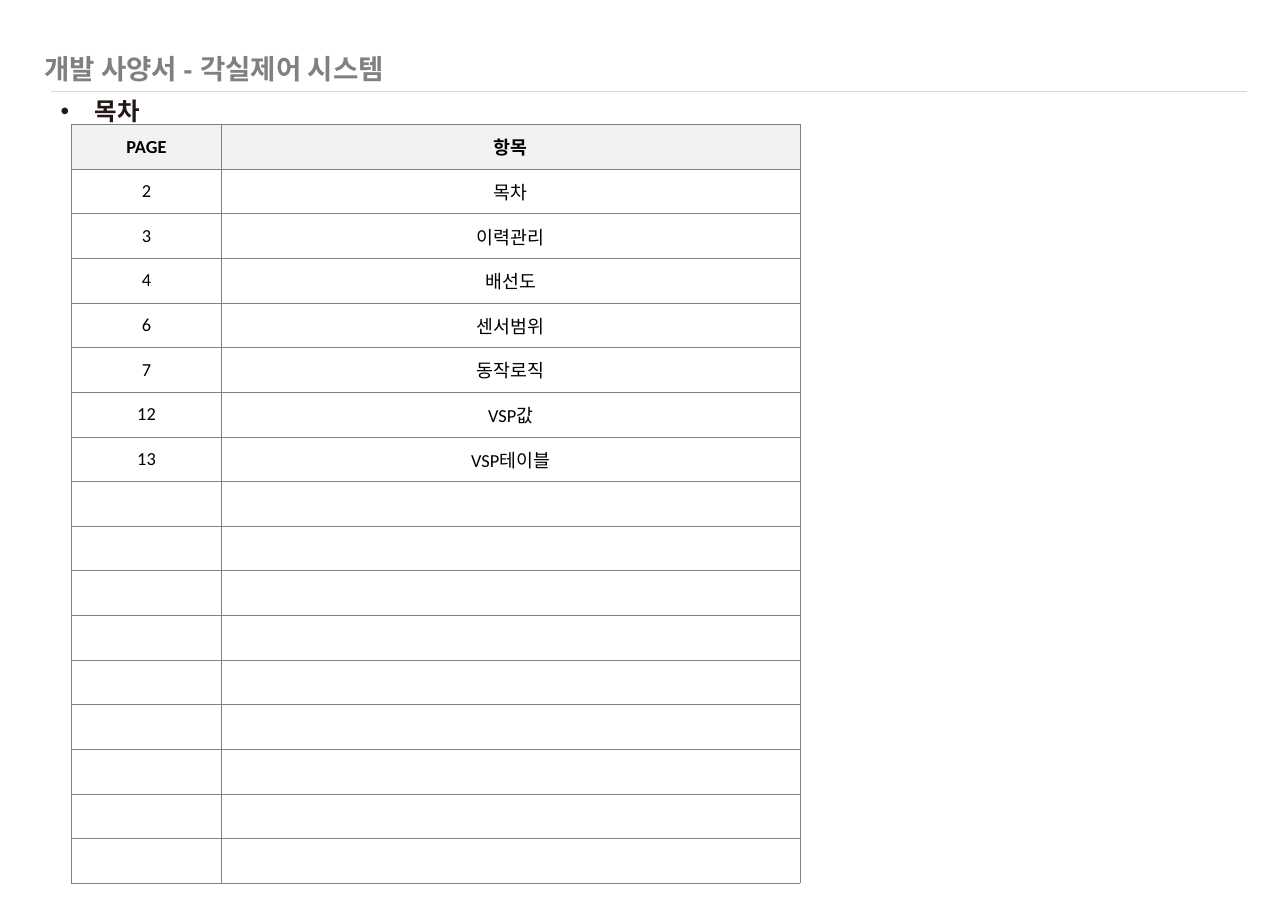
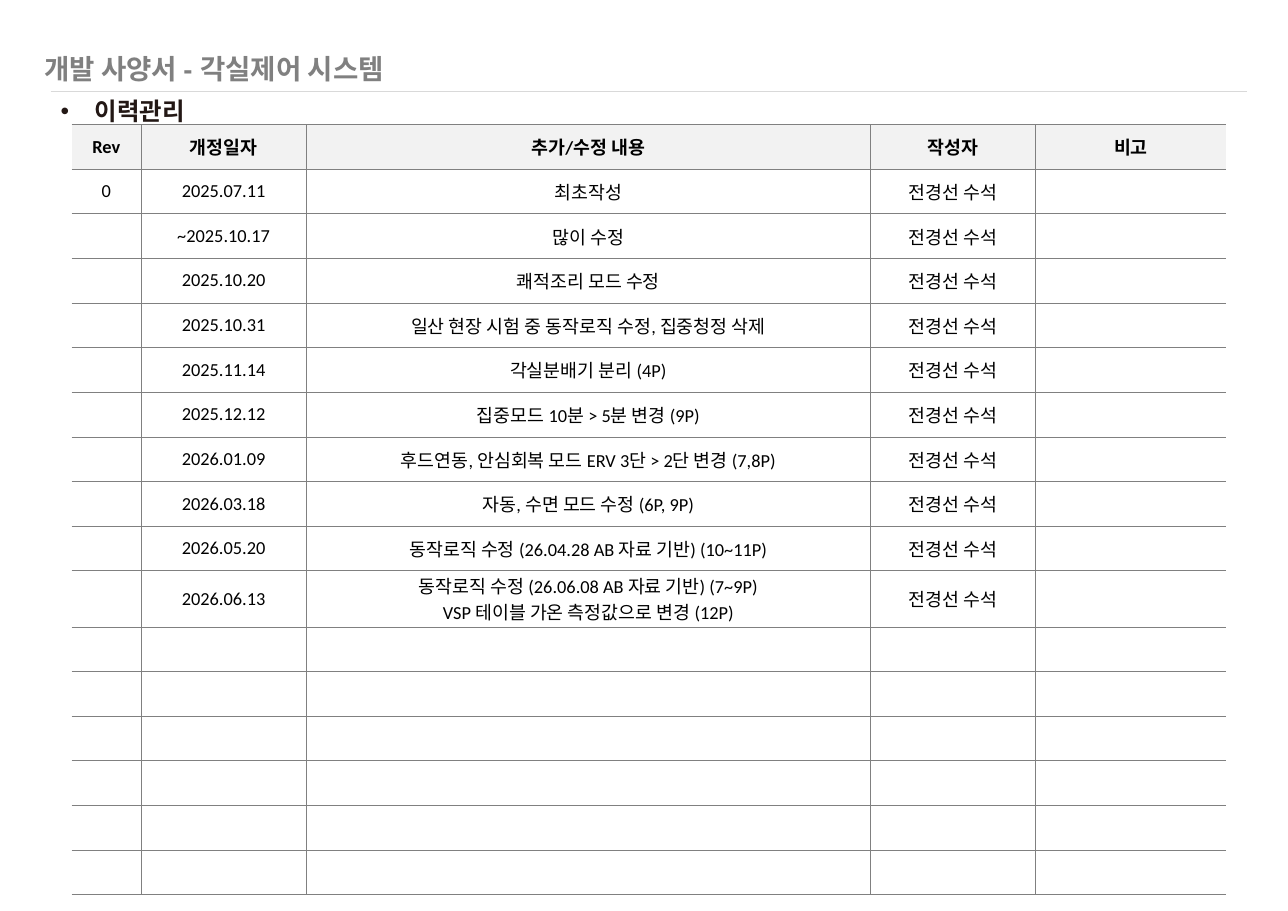
from lxml import etree
from pptx import Presentation
from pptx import util as u
from pptx.dml.color import RGBColor
from pptx.enum import shapes, text
from pptx.oxml import ns

ROW_COUNT = 17
ROW_HEIGHT = 6.89 / ROW_COUNT
TWO_LINE_HEIGHT = 0.51
AUTHOR = "전경선 수석"

CONTENTS = [
    ("PAGE", "항목"),
    ("2", "목차"),
    ("3", "이력관리"),
    ("4", "배선도"),
    ("6", "센서범위"),
    ("7", "동작로직"),
    ("12", "VSP값"),
    ("13", "VSP테이블"),
]

REVISIONS = [
    ("2025.07.11", "최초작성"),
    ("~2025.10.17", "많이 수정"),
    ("2025.10.20", "쾌적조리 모드 수정"),
    ("2025.10.31", "일산 현장 시험 중 동작로직 수정, 집중청정 삭제"),
    ("2025.11.14", "각실분배기 분리 (4P)"),
    ("2025.12.12", "집중모드 10분 > 5분 변경 (9P)"),
    ("2026.01.09", "후드연동, 안심회복 모드 ERV 3단 > 2단 변경 (7,8P)"),
    ("2026.03.18", "자동, 수면 모드 수정 (6P, 9P)"),
    ("2026.05.20", "동작로직 수정 (26.04.28 AB 자료 기반) (10~11P)"),
    ("2026.06.13", "동작로직 수정 (26.06.08 AB 자료 기반) (7~9P)\n"
                   "VSP 테이블 가온 측정값으로 변경 (12P)"),
]


def color(value):
    return RGBColor.from_string(value)


class Deck:
    """Holds the shared style and the current slide."""

    GRAY, RULE, INK, BLACK, HEADER = "808080", "D9D9D9", "231815", "000000", "F2F2F2"
    HEADING_FONT, TABLE_FONT = "Arial", "Calibri"
    BORDER_WIDTH = u.Pt(0.5)

    def __init__(self):
        self.presentation = Presentation()
        self.presentation.slide_width = u.Inches(11.69)
        self.presentation.slide_height = u.Inches(8.27)
        self.slide = None

    def add_slide(self, section, section_width):
        layout = self.presentation.slide_layouts[1]
        self.slide = self.presentation.slides.add_slide(layout)
        self.rule()
        title, body = self.slide.placeholders
        self.heading(title, "개발 사양서 - 각실제어 시스템",
                     (0.3, 0.42, 3.78, 0.4), 18, self.GRAY)
        self.heading(body, section, (0.45, 0.82, section_width, 0.37), 16, self.INK)
        self.bullet(body.text_frame.paragraphs[0])

    def rule(self):
        line = self.slide.shapes.add_connector(
            shapes.MSO_CONNECTOR.STRAIGHT,
            u.Inches(0.46), u.Inches(0.83), u.Inches(11.32), u.Inches(0.83))
        line.line.color.rgb = color(self.RULE)
        line.line.width = self.BORDER_WIDTH
        etree.SubElement(line._element.spPr, ns.qn("a:effectLst"))

    def heading(self, shape, content, box, size, ink):
        shape.left, shape.top, shape.width, shape.height = map(u.Inches, box)
        frame = shape.text_frame
        frame.text = content
        frame.word_wrap = False
        frame.auto_size = text.MSO_AUTO_SIZE.SHAPE_TO_FIT_TEXT
        frame.vertical_anchor = text.MSO_ANCHOR.BOTTOM
        paragraph = frame.paragraphs[0]
        paragraph.alignment = text.PP_ALIGN.LEFT
        paragraph.space_before = u.Pt(0)
        self.format_runs(paragraph, self.HEADING_FONT, size, ink, True)

    def bullet(self, paragraph):
        properties = paragraph._p.get_or_add_pPr()
        properties.set("marL", str(u.Inches(0.31)))
        properties.set("indent", str(-u.Inches(0.31)))
        etree.SubElement(properties, ns.qn("a:buFont"), typeface=self.HEADING_FONT)
        etree.SubElement(properties, ns.qn("a:buChar"), char="•")

    def format_runs(self, paragraph, font, size, ink, bold):
        for run in paragraph.runs:
            run.font.name = font
            run.font.size = u.Pt(size)
            run.font.bold = bold
            run.font.color.rgb = color(ink)

    def table(self, rows, widths, closed_sides=True):
        blank = ("",) * len(widths)
        rows = rows + [blank] * (ROW_COUNT - len(rows))
        heights = [TWO_LINE_HEIGHT if "\n" in "".join(values) else ROW_HEIGHT
                   for values in rows]
        graphic = self.slide.shapes.add_table(
            ROW_COUNT, len(widths), u.Inches(0.65), u.Inches(1.13),
            u.Inches(sum(widths)), u.Inches(sum(heights)))
        table = graphic.table
        table.first_row = table.horz_banding = False
        for column, width in zip(table.columns, widths):
            column.width = u.Inches(width)
        for index, (row, values) in enumerate(zip(table.rows, rows)):
            row.height = u.Inches(heights[index])
            for position, (cell, value) in enumerate(zip(row.cells, values)):
                hidden = set()
                if not closed_sides and position == 0:
                    hidden.add("L")
                if not closed_sides and position == len(widths) - 1:
                    hidden.add("R")
                self.cell(cell, value, index == 0, hidden)

    def cell(self, cell, value, is_header, hidden):
        cell.margin_left = cell.margin_right = cell.margin_top = u.Inches(0.01)
        cell.margin_bottom = u.Inches(0.09 if "\n" in value else 0.01)
        cell.vertical_anchor = text.MSO_ANCHOR.MIDDLE
        self.borders(cell, hidden)
        if is_header:
            cell.fill.solid()
            cell.fill.fore_color.rgb = color(self.HEADER)
        else:
            cell.fill.background()
        cell.text_frame.text = value
        for paragraph in cell.text_frame.paragraphs:
            paragraph.alignment = text.PP_ALIGN.CENTER
            self.format_runs(paragraph, self.TABLE_FONT, 12, self.BLACK, is_header)

    def borders(self, cell, hidden):
        properties = cell._tc.get_or_add_tcPr()
        for side in "LRTB":
            line = etree.SubElement(properties, ns.qn(f"a:ln{side}"),
                                    w=str(self.BORDER_WIDTH))
            if side in hidden:
                etree.SubElement(line, ns.qn("a:noFill"))
            else:
                fill = etree.SubElement(line, ns.qn("a:solidFill"))
                etree.SubElement(fill, ns.qn("a:srgbClr"), val=self.GRAY)


def main():
    deck = Deck()
    deck.add_slide("목차", 0.97)
    deck.table(CONTENTS, [1.36, 5.25])

    deck.add_slide("이력관리", 1.42)
    history = [("Rev", "개정일자", "추가/수정 내용", "작성자", "비고")]
    for index, (date, change) in enumerate(REVISIONS):
        history.append(("0" if index == 0 else "", date, change, AUTHOR, ""))
    deck.table(history, [0.63, 1.5, 5.12, 1.5, 1.73], closed_sides=False)
    deck.presentation.save("out.pptx")


if __name__ == "__main__":
    main()
